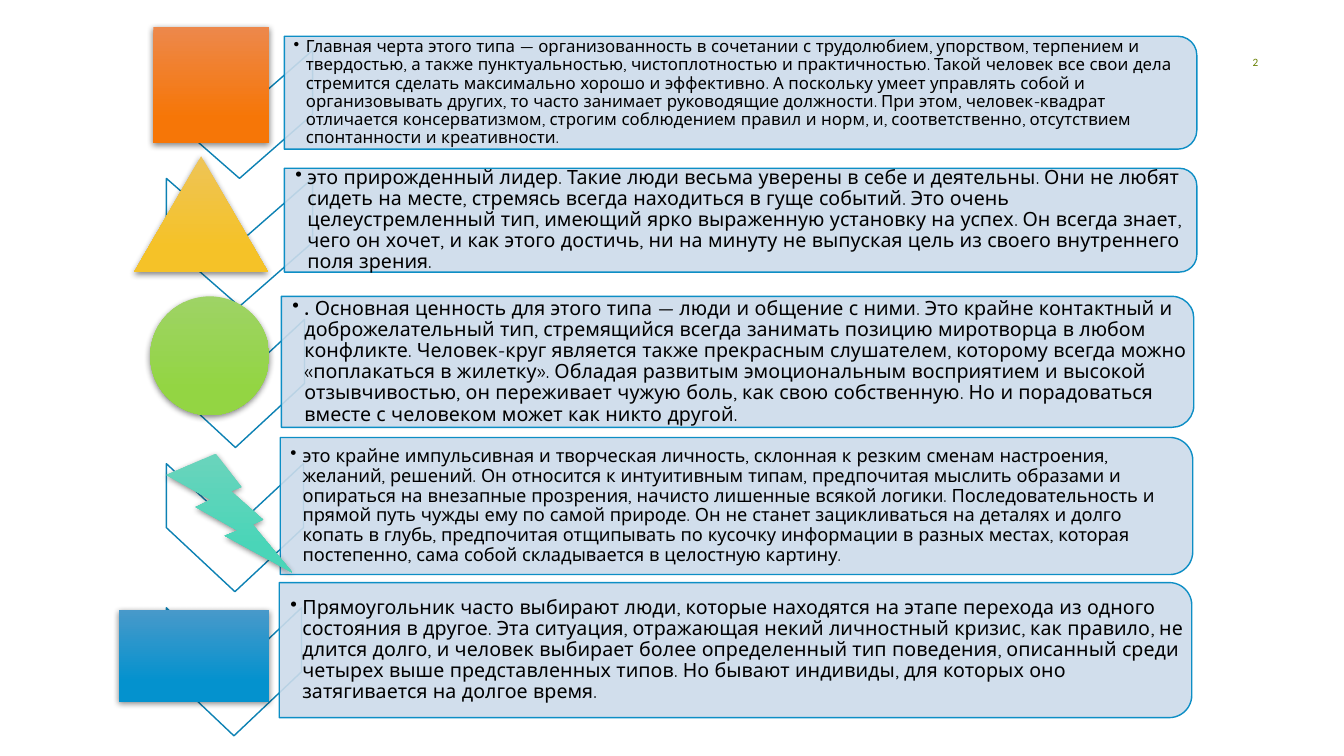
from dataclasses import dataclass

from lxml import etree
from pptx import Presentation
from pptx import util as u
from pptx.dml.color import RGBColor
from pptx.enum import shapes, text
from pptx.oxml import ns

# Content: panel (left, top, height), chevron (top, width), type size, bold lead, text
TYPES = [
    ((2.82, 0.36, 1.12), (0.5, 1.45), 12, "",
     "Главная черта этого типа — организованность в сочетании с трудолюбием, упорством, "
     "терпением и твердостью, а также пунктуальностью, чистоплотностью и практичностью. "
     "Такой человек все свои дела стремится сделать максимально хорошо и эффективно. "
     "А поскольку умеет управлять собой и организовывать других, то часто занимает "
     "руководящие должности. При этом, человек-квадрат отличается консерватизмом, строгим "
     "соблюдением правил и норм, и, соответственно, отсутствием спонтанности и креативности."),
    ((2.82, 1.67, 1.03), (1.77, 1.45), 14, "",
     "это прирожденный лидер. Такие люди весьма уверены в себе и деятельны. Они не любят "
     "сидеть на месте, стремясь всегда находиться в гуще событий. Это очень "
     "целеустремленный тип, имеющий ярко выраженную установку на успех. Он всегда знает, "
     "чего он хочет, и как этого достичь, ни на минуту не выпуская цель из своего "
     "внутреннего поля зрения."),
    ((2.79, 2.94, 1.3), (3.17, 1.37), 14, ". ",
     "Основная ценность для этого типа — люди и общение с ними. Это крайне контактный и "
     "доброжелательный тип, стремящийся всегда занимать позицию миротворца в любом "
     "конфликте. Человек-круг является также прекрасным слушателем, которому всегда можно "
     "«поплакаться в жилетку». Обладая развитым эмоциональным восприятием и высокой "
     "отзывчивостью, он переживает чужую боль, как свою собственную. Но и порадоваться "
     "вместе с человеком может как никто другой."),
    ((2.78, 4.34, 1.36), (4.6, 1.36), 13, "",
     "это крайне импульсивная и творческая личность, склонная к резким сменам настроения, "
     "желаний, решений. Он относится к интуитивным типам, предпочитая мыслить образами и "
     "опираться на внезапные прозрения, начисто лишенные всякой логики. Последовательность "
     "и прямой путь чужды ему по самой природе. Он не станет зацикливаться на деталях и "
     "долго копать в глубь, предпочитая отщипывать по кусочку информации в разных местах, "
     "которая постепенно, сама собой складывается в целостную картину."),
    ((2.77, 5.78, 1.34), (6.03, 1.34), 14, "",
     "Прямоугольник часто выбирают люди, которые находятся на этапе перехода из одного "
     "состояния в другое. Эта ситуация, отражающая некий личностный кризис, как правило, "
     "не длится долго, и человек выбирает более определенный тип поведения, описанный "
     "среди четырех выше представленных типов. Но бывают индивиды, для которых оно "
     "затягивается на долгое время."),
]
KIND = shapes.MSO_SHAPE
FIGURES = [
    (KIND.RECTANGLE, (1.52, 0.27, 1.15, 1.15), ("ED884B", "F67607")),
    (KIND.ISOSCELES_TRIANGLE, (1.33, 1.55, 1.33, 1.15), ("EEC457", "F5C228")),
    (KIND.OVAL, (1.49, 2.94, 1.18, 1.18), ("9ED365", "93D543")),
    (KIND.LIGHTNING_BOLT, (1.65, 4.5, 1.25, 1.18), ("6AD4BC", "4AD5B8")),
    (KIND.RECTANGLE, (1.18, 6.05, 1.49, 0.91), ("4899CA", "0492CE")),
]
PAGE_NUMBER = "2"


@dataclass(frozen=True)
class Theme:
    font: str = "Quicksand"
    number_font: str = "Calibri"
    number_size: int = 8
    number: str = "688000"
    ink: str = "000000"
    chevron: str = "FFFFFF"
    chevron_line: str = "0C81B3"
    panel: str = "CCDBEA"
    panel_line: str = "0D8EC5"
    shadow: str = "000000"


THEME = Theme()
CHEVRON_LEFT, CHEVRON_HEIGHT = 1.65, 1.27
PANEL_WIDTH, TEXT_WIDTH, INDENT = 9.05, 9.0, 0.12


def add_child(parent, tag, **attributes):
    return etree.SubElement(parent, ns.qn(tag), attributes)


def add_shape(page, kind, box):
    shape = page.shapes.add_shape(kind, *map(u.Inches, box))
    shape.shadow.inherit = False
    return shape


def add_turned(page, kind, box, fill, line):
    """Place a shape turned by 90 degrees so that it covers the given box."""
    left, top, width, height = box
    shift = (width - height) / 2
    shape = add_shape(page, kind, (left + shift, top - shift, height, width))
    shape.rotation = 90
    shape.fill.solid()
    shape.fill.fore_color.rgb = RGBColor.from_string(fill)
    shape.line.color.rgb = RGBColor.from_string(line)
    shape.line.width = u.Pt(1)
    return shape


def add_text_box(page, box, insets):
    frame = page.shapes.add_textbox(*map(u.Inches, box)).text_frame
    frame.word_wrap = True
    frame.vertical_anchor = text.MSO_ANCHOR.MIDDLE
    (frame.margin_left, frame.margin_top,
     frame.margin_right, frame.margin_bottom) = map(u.Inches, insets)
    return frame


def style(font, name, size, color):
    font.name, font.size = name, u.Pt(size)
    font.color.rgb = RGBColor.from_string(color)


def add_type(page, panel, chevron, size, lead, words):
    left, top, height = panel
    chevron_top, chevron_width = chevron
    add_turned(page, KIND.CHEVRON,
               (CHEVRON_LEFT, chevron_top, chevron_width, CHEVRON_HEIGHT),
               THEME.chevron, THEME.chevron_line)
    plate = add_turned(page, KIND.ROUND_2_SAME_RECTANGLE,
                       (left, top, PANEL_WIDTH, height), THEME.panel, THEME.panel_line)
    color = plate.fill._xPr.find(ns.qn("a:solidFill"))[0]
    add_child(color, "a:alpha", val="90000")

    # Bulleted description
    frame = add_text_box(page, (left, top, TEXT_WIDTH, height),
                         (size / 128, 0.01, 0.01, 0.01))
    para = frame.paragraphs[0]
    props = para._p.get_or_add_pPr()
    props.set("marL", str(u.Inches(INDENT)))
    props.set("indent", str(-u.Inches(INDENT)))
    add_child(props, "a:buChar", char="•")
    para.line_spacing = 0.9
    for part, bold in ((lead, True), (words, False)):
        if part:
            span = para.add_run()
            span.text = part
            style(span.font, THEME.font, size, THEME.ink)
            span.font.bold = bold


def add_figure(page, kind, box, colors):
    shape = add_shape(page, kind, box)
    shape.line.fill.background()
    shape.fill.gradient()
    shape.fill.gradient_angle = 270
    for stop, position, color in zip(shape.fill.gradient_stops, (0, 0.78), colors):
        stop.position = position
        stop.color.rgb = RGBColor.from_string(color)
    effects = shape._element.spPr.find(ns.qn("a:effectLst"))
    shadow = add_child(effects, "a:outerShdw", blurRad=str(u.Pt(4.5)), dist=str(u.Pt(1.5)),
                       dir="5400000", algn="ctr", rotWithShape="0")
    color = add_child(shadow, "a:srgbClr", val=THEME.shadow)
    add_child(color, "a:alpha", val="48000")


def main():
    deck = Presentation()
    deck.slide_width, deck.slide_height = u.Inches(13.33), u.Inches(7.5)
    page = deck.slides.add_slide(deck.slide_layouts[6])

    # Page number
    para = add_text_box(page, (9.58, 0.42, 3, 0.4), (0.1, 0.05, 0.1, 0.05)).paragraphs[0]
    para.text = PAGE_NUMBER
    para.alignment = text.PP_ALIGN.RIGHT
    style(para.runs[0].font, THEME.number_font, THEME.number_size, THEME.number)

    # Rows, then the figures on top of them
    for row in TYPES:
        add_type(page, *row)
    for figure in FIGURES:
        add_figure(page, *figure)
    deck.save("out.pptx")


if __name__ == "__main__":
    main()
